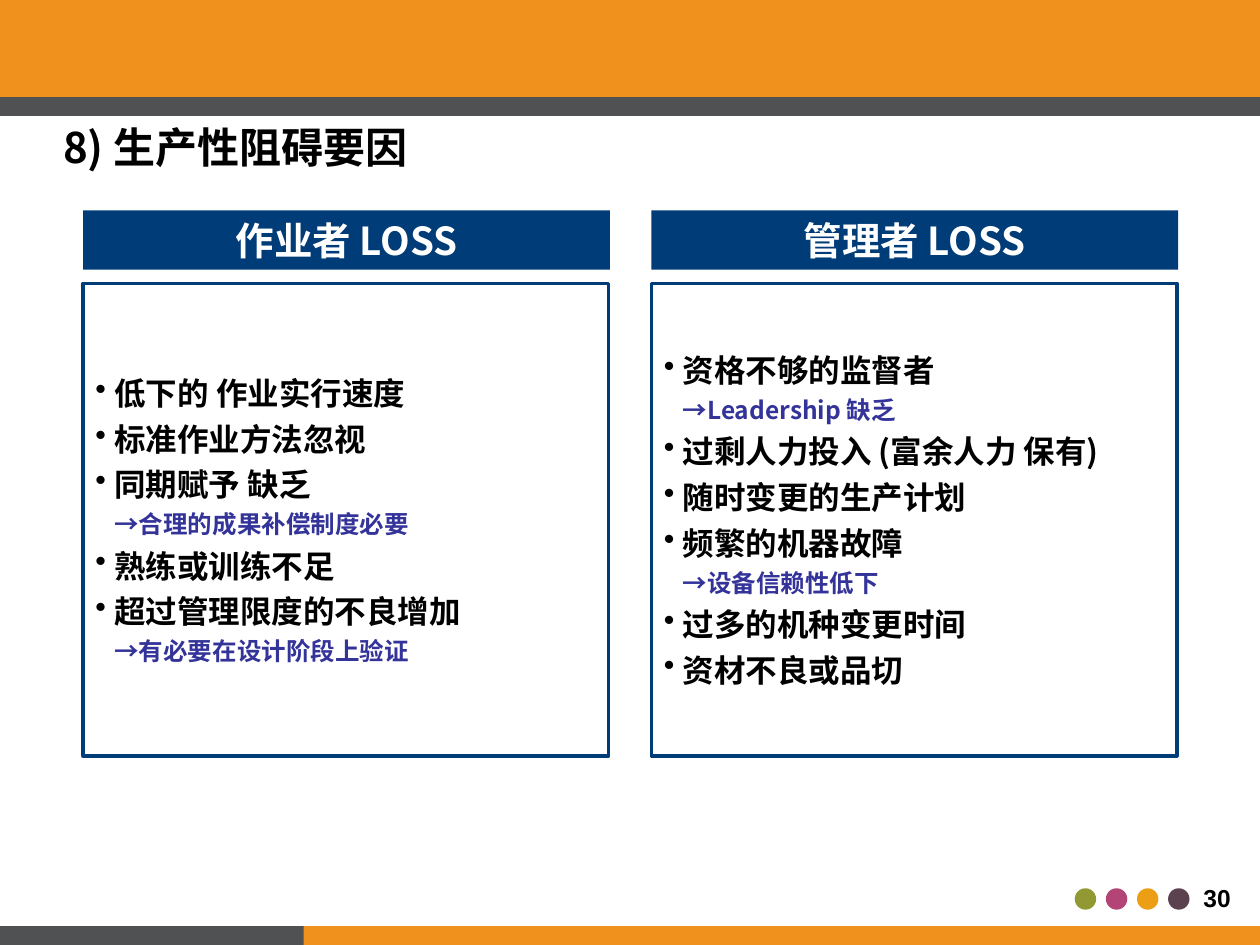
import pptx
import pptx.dml.color
import pptx.enum.shapes
import pptx.enum.text
import pptx.oxml
import pptx.oxml.ns
import pptx.util

Inches = pptx.util.Inches
Pt = pptx.util.Pt
Shape = pptx.enum.shapes.MSO_SHAPE
Align = pptx.enum.text.PP_ALIGN
Anchor = pptx.enum.text.MSO_ANCHOR

COLORS = {
    "orange": "F0901D", "grey": "505153", "navy": "003C78", "indigo": "333399",
    "black": "000000", "white": "FFFFFF",
}
DOTS = ["939932", "B24476", "EC9F14", "5C414F"]
CJK_FONT = "Noto Sans CJK SC"
ARROW = "→"

COLUMNS = [
    ("作业者 LOSS", [
        "低下的 作业实行速度", "标准作业方法忽视", "同期赋予 缺乏",
        "→合理的成果补偿制度必要", "熟练或训练不足",
        "超过管理限度的不良增加", "→有必要在设计阶段上验证",
    ]),
    ("管理者 LOSS", [
        "资格不够的监督者", "→Leadership 缺乏", "过剩人力投入 (富余人力 保有)",
        "随时变更的生产计划", "频繁的机器故障", "→设备信赖性低下",
        "过多的机种变更时间", "资材不良或品切",
    ]),
]


def rgb(code):
    return pptx.dml.color.RGBColor.from_string(code)


def add_span(para, text, size, color, font=CJK_FONT):
    span = para.add_run()
    span.text = text
    span.font.size = Pt(size)
    span.font.bold = True
    span.font.name = font
    span.font.color.rgb = rgb(color)
    east_asian = pptx.oxml.parse_xml(
        f'<a:ea {pptx.oxml.ns.nsdecls("a")} typeface="{font}"/>')
    span.font._element.append(east_asian)


def add_block(page, kind, left, top, width, height, fill=None, line=None):
    block = page.shapes.add_shape(
        kind, Inches(left), Inches(top), Inches(width), Inches(height))
    block.shadow.inherit = False
    if fill:
        block.fill.solid()
        block.fill.fore_color.rgb = rgb(fill)
    else:
        block.fill.background()
    if line:
        block.line.color.rgb = rgb(line)
        block.line.width = Pt(2)
    else:
        block.line.fill.background()
    return block


def add_bullet(para):
    para._p.get_or_add_pPr().append(pptx.oxml.parse_xml(
        f'<a:buChar {pptx.oxml.ns.nsdecls("a")} char="•"/>'))


def add_item(para, text, is_first):
    """Write a bulleted cause, or an indented remark if it opens with an arrow."""
    remark = text.startswith(ARROW)
    size = 14 if remark else 18
    properties = para._p.get_or_add_pPr()
    properties.set("marL", str(Inches(0.15)))
    properties.set("indent", str(0 if remark else -Inches(0.15)))
    if not remark:
        add_bullet(para)
    para.alignment = Align.LEFT
    if not is_first:
        para.space_before = Pt(size / 4)
    add_span(para, text, size, COLORS["indigo" if remark else "black"])


def add_column(page, left, heading, items):
    header = add_block(page, Shape.RECTANGLE, left, 1.67, 4.18, 0.47, COLORS["navy"])
    header.text_frame.vertical_anchor = Anchor.MIDDLE
    para = header.text_frame.paragraphs[0]
    para.alignment = Align.CENTER
    add_span(para, heading, 22, COLORS["white"])

    panel = add_block(page, Shape.RECTANGLE, left, 2.25, 4.17, 3.75, line=COLORS["navy"])
    frame = panel.text_frame
    frame.word_wrap = True
    frame.vertical_anchor = Anchor.MIDDLE
    for index, item in enumerate(items):
        para = frame.add_paragraph() if index else frame.paragraphs[0]
        add_item(para, item, index == 0)


def add_bands(page):
    for left, top, width, height, color in [
        (0, 0, 10, 0.77, "orange"), (0, 0.77, 10, 0.15, "grey"),
        (1.95, 7.35, 8.05, 0.15, "orange"), (0, 7.35, 2.41, 0.15, "grey"),
    ]:
        add_block(page, Shape.RECTANGLE, left, top, width, height, COLORS[color])


def add_page_number(page, number):
    for index, color in enumerate(DOTS):
        add_block(page, Shape.OVAL, 8.53 + index * 0.247, 7.05, 0.17, 0.17, color)
    box = page.shapes.add_textbox(Inches(9.44), Inches(6.96), Inches(0.44), Inches(0.34))
    box.text_frame.word_wrap = False
    para = box.text_frame.paragraphs[0]
    para.alignment = Align.CENTER
    add_span(para, number, 14, COLORS["black"], "Arial")


def set_title(page, text):
    title = page.shapes.title
    title.left, title.top = Inches(0.4), Inches(0.91)
    title.width, title.height = Inches(4.43), Inches(0.51)
    frame = title.text_frame
    frame.word_wrap = True
    frame.auto_size = pptx.enum.text.MSO_AUTO_SIZE.NONE
    frame.vertical_anchor = Anchor.MIDDLE
    para = frame.paragraphs[0]
    para.alignment = Align.LEFT
    add_span(para, text, 24, COLORS["black"])


def main():
    deck = pptx.Presentation()
    deck.slide_width, deck.slide_height = Inches(10), Inches(7.5)
    page = deck.slides.add_slide(deck.slide_layouts[5])
    add_page_number(page, "30")
    add_bands(page)
    set_title(page, "8) 生产性阻碍要因")
    for index, (heading, items) in enumerate(COLUMNS):
        add_column(page, 0.66 + index * 4.51, heading, items)
    deck.save("out.pptx")


if __name__ == "__main__":
    main()
